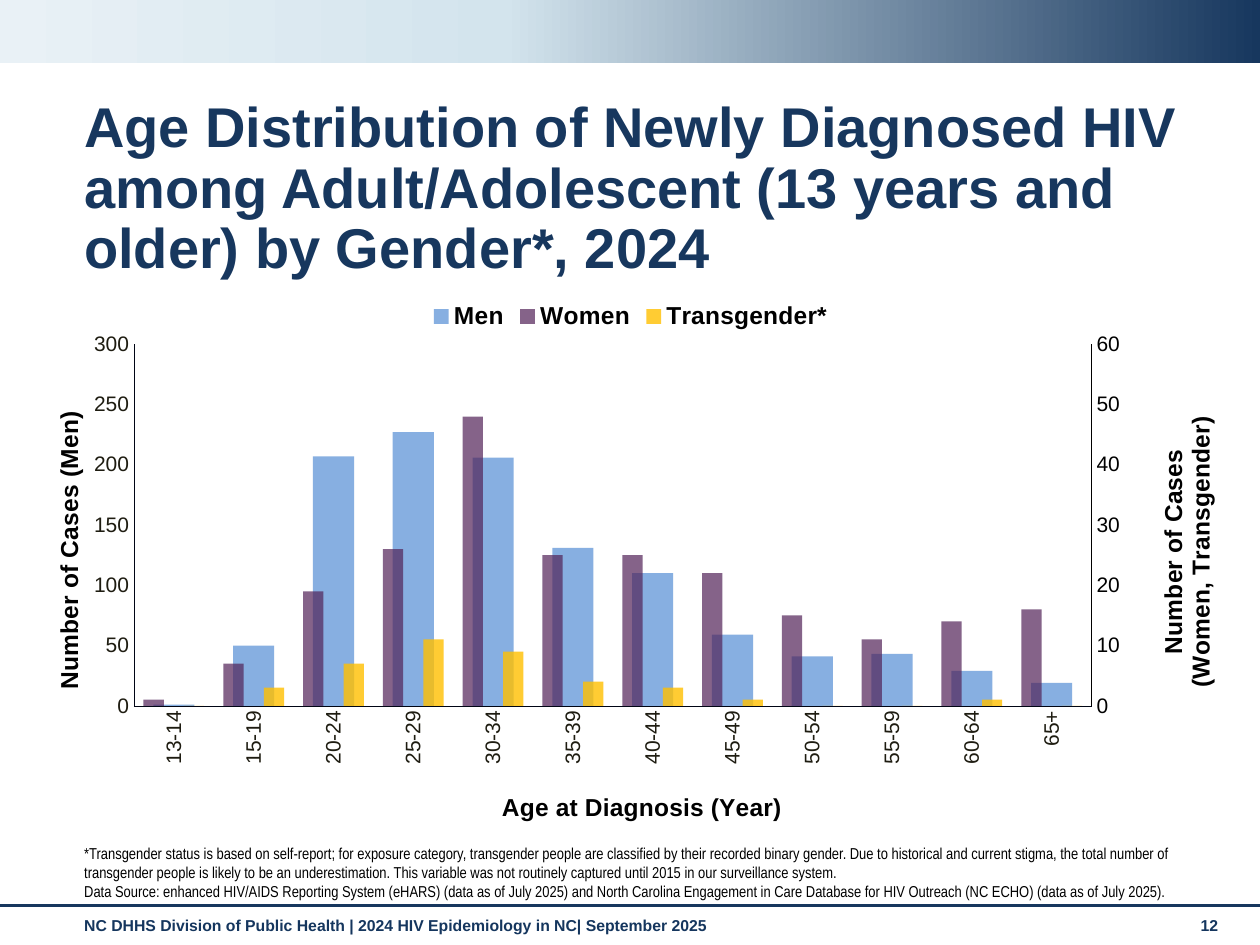
from copy import deepcopy

from pptx import Presentation
from pptx.chart.axis import CategoryAxis, ValueAxis
from pptx.chart.data import CategoryChartData
from pptx.dml.color import RGBColor
from pptx.enum.chart import XL_CHART_TYPE as CHART, XL_LEGEND_POSITION as LEGEND, XL_TICK_MARK as TICK
from pptx.enum.shapes import MSO_CONNECTOR, MSO_SHAPE
from pptx.enum.text import MSO_ANCHOR as ANCHOR
from pptx.oxml.ns import qn
from pptx.oxml.xmlchemy import OxmlElement
from pptx.util import Inches, Pt

NAVY = RGBColor(0x17, 0x37, 0x5E)
FOOTER_BLUE = RGBColor(0x15, 0x36, 0x5E)
PALE_BLUE = RGBColor(0xD3, 0xE4, 0xED)
ICE = RGBColor(0xE9, 0xF1, 0xF6)
BLACK = RGBColor(0, 0, 0)
AXIS_LINE = RGBColor(0x00, 0x05, 0x14)
TICK_TEXT = RGBColor(0x1E, 0x1C, 0x11)
MEN_BLUE = RGBColor(0x55, 0x8E, 0xD5)
WOMEN_PURPLE = RGBColor(0x52, 0x22, 0x58)
TRANS_GOLD = RGBColor(0xFF, 0xC0, 0x00)
UPRIGHT = "-5400000"

AGES = ["13-14", "15-19", "20-24", "25-29", "30-34", "35-39",
        "40-44", "45-49", "50-54", "55-59", "60-64", "65+"]
SERIES = [
    ("Men", [1, 50, 207, 227, 206, 131, 110, 59, 41, 43, 29, 19], MEN_BLUE, 70),
    ("Women", [1, 7, 19, 26, 48, 25, 25, 22, 15, 11, 14, 16], WOMEN_PURPLE, 70),
    ("Transgender*", [0, 3, 7, 11, 9, 4, 3, 1, 0, 0, 1, 0], TRANS_GOLD, 80),
]

prs = Presentation()
prs.slide_width, prs.slide_height = Inches(10), Inches(7.5)
s = prs.slides.add_slide(prs.slide_layouts[6])


def add_text(box, paragraphs, size, color, font="Arial", bold=False, anchor=ANCHOR.TOP, spacing=None):
    tf = s.shapes.add_textbox(*map(Inches, box)).text_frame
    tf.word_wrap = True
    tf.vertical_anchor = anchor
    tf.text = "\n".join(paragraphs)
    for p in tf.paragraphs:
        p.line_spacing = spacing
        f = p.runs[0].font
        f.name, f.size, f.bold, f.color.rgb = font, Pt(size), bold, color


def set_layout(parent, **values):
    """Place a chart part by fractions of the chart area."""
    layout = parent.find(qn("c:layout"))
    if layout is None:
        layout = OxmlElement("c:layout")
        parent.insert(0, layout)
    manual = OxmlElement("c:manualLayout")
    layout.append(manual)
    for tag, value in values.items():
        el = OxmlElement(f"c:{tag}")
        el.set("val", str(value))
        manual.append(el)


# Header band and footer
band = s.shapes.add_shape(MSO_SHAPE.RECTANGLE, 0, 0, Inches(10), Inches(0.5))
band.shadow.inherit = False
band.line.fill.background()
band.fill.gradient()
band.fill.gradient_angle = 180
stop_list = band._element.spPr.find(".//" + qn("a:gsLst"))
stop_list.append(deepcopy(stop_list[0]))
for stop, (position, color) in zip(band.fill.gradient_stops, [(0, NAVY), (0.6, PALE_BLUE), (1, ICE)]):
    stop.position, stop.color.rgb = position, color

rule = s.shapes.add_connector(MSO_CONNECTOR.STRAIGHT, 0, Inches(7.19), Inches(10), Inches(7.19))
rule.line.color.rgb, rule.line.width = NAVY, Pt(1.75)
rule._element.spPr.append(OxmlElement("a:effectLst"))

add_text((0.57, 7.22, 8.74, 0.29),
         ["NC DHHS Division of Public Health | 2024 HIV Epidemiology in NC| September 2025"],
         9, FOOTER_BLUE, bold=True)
add_text((9.43, 7.22, 0.44, 0.3), ["12"], 9, FOOTER_BLUE, bold=True)

add_text((0.57, 0.74, 9.43, 0.6),
         ["Age Distribution of Newly Diagnosed HIV among Adult/Adolescent "
          "(13 years and older) by Gender*, 2024"],
         32, NAVY, bold=True, spacing=0.9)

# Chart
data = CategoryChartData()
data.categories = AGES
for name, values, *_ in SERIES:
    data.add_series(name, values)
chart = s.shapes.add_chart(CHART.COLUMN_CLUSTERED, Inches(0.29), Inches(2.29),
                           Inches(9.43), Inches(4.47), data).chart
chart.has_title = False
chart.font.name, chart.font.size, chart.font.bold = "Arial", Pt(18), True
chart.font.color.rgb = BLACK
chart.has_legend = True
chart.legend.position = LEGEND.TOP
chart.legend.include_in_layout = False
legend_font = chart.legend.font
legend_font.name, legend_font.size, legend_font.bold = "Arial", Pt(14), True
legend_font.color.rgb = BLACK

plot = chart.plots[0]
plot.gap_width, plot.overlap, plot.vary_by_categories = 94, -100, False
for series, (_, _, color, opacity) in zip(plot.series, SERIES):
    series.format.fill.solid()
    series.format.fill.fore_color.rgb = color
    alpha = OxmlElement("a:alpha")
    alpha.set("val", str(opacity * 1000))
    series._element.find(".//" + qn("a:srgbClr")).append(alpha)

# Women and Transgender go on a second pair of axes
age_axis, men_axis = chart.category_axis, chart.value_axis
men_axis.has_major_gridlines = False
men_bars = plot._element
plot_area = men_bars.getparent()
right_bars = deepcopy(men_bars)
men_bars.addnext(right_bars)
right_bars.remove(right_bars.findall(qn("c:ser"))[0])
for ser in men_bars.findall(qn("c:ser"))[1:]:
    men_bars.remove(ser)

right_val, right_cat = deepcopy(men_axis._element), deepcopy(age_axis._element)
men_axis._element.addnext(right_val)
right_val.addnext(right_cat)
CAT_ID, VAL_ID = "50010", "50020"
for el, own, cross in [(right_val, VAL_ID, CAT_ID), (right_cat, CAT_ID, VAL_ID)]:
    el.find(qn("c:axId")).set("val", own)
    el.find(qn("c:crossAx")).set("val", cross)
for el, axis_id in zip(right_bars.findall(qn("c:axId")), [CAT_ID, VAL_ID]):
    el.set("val", axis_id)
right_val.find(qn("c:axPos")).set("val", "r")
right_val.find(qn("c:crosses")).set("val", "max")
CategoryAxis(right_cat).visible = False
right_axis = ValueAxis(right_val)

for axis, top, step in [(men_axis, 300, 50), (right_axis, 60, 10)]:
    axis.minimum_scale, axis.maximum_scale, axis.major_unit = 0, top, step

AXES = [
    (age_axis, "Age at Diagnosis (Year)", TICK_TEXT, AXIS_LINE, 0.33, "0", (0.388, 0.885)),
    (men_axis, "Number of Cases (Men)", TICK_TEXT, AXIS_LINE, 0.33, UPRIGHT, (0.01, 0.21)),
    (right_axis, "Number of Cases\n(Women, Transgender)", BLACK, BLACK, 0.75, UPRIGHT, (0.94, 0.22)),
]
for axis, title, tick_color, line_color, width, rotation, (x, y) in AXES:
    axis.major_tick_mark = axis.minor_tick_mark = TICK.NONE
    axis.format.line.color.rgb, axis.format.line.width = line_color, Pt(width)
    f = axis.tick_labels.font
    f.name, f.size, f.bold, f.color.rgb = "Arial", Pt(12), False, tick_color
    tf = axis.axis_title.text_frame
    tf.text = title
    tf._txBody.find(qn("a:bodyPr")).set("rot", rotation)
    for p in tf.paragraphs:
        f = p.runs[0].font
        f.name, f.size, f.bold, f.color.rgb = "Arial", Pt(14), True, BLACK
    set_layout(axis.axis_title._element, xMode="edge", yMode="edge", x=x, y=y)
age_axis._element.find(qn("c:txPr")).find(qn("a:bodyPr")).set("rot", UPRIGHT)
set_layout(plot_area, layoutTarget="inner", xMode="edge", yMode="edge",
           x=0.082, y=0.099, w=0.806, h=0.642)

# Footnotes
add_text((0.57, 6.99, 9.29, 0.21),
         ["*Transgender status is based on self-report; for exposure category, transgender people are "
          "classified by their recorded binary gender. Due to historical and current stigma, the total "
          "number of transgender people is likely to be an underestimation. This variable was not "
          "routinely captured until 2015 in our surveillance system.",
          "Data Source: enhanced HIV/AIDS Reporting System (eHARS) (data as of July 2025) and North "
          "Carolina Engagement in Care Database for HIV Outreach (NC ECHO) (data as of July 2025)."],
         9, BLACK, font="Arial Narrow", anchor=ANCHOR.BOTTOM)

prs.save("out.pptx")
